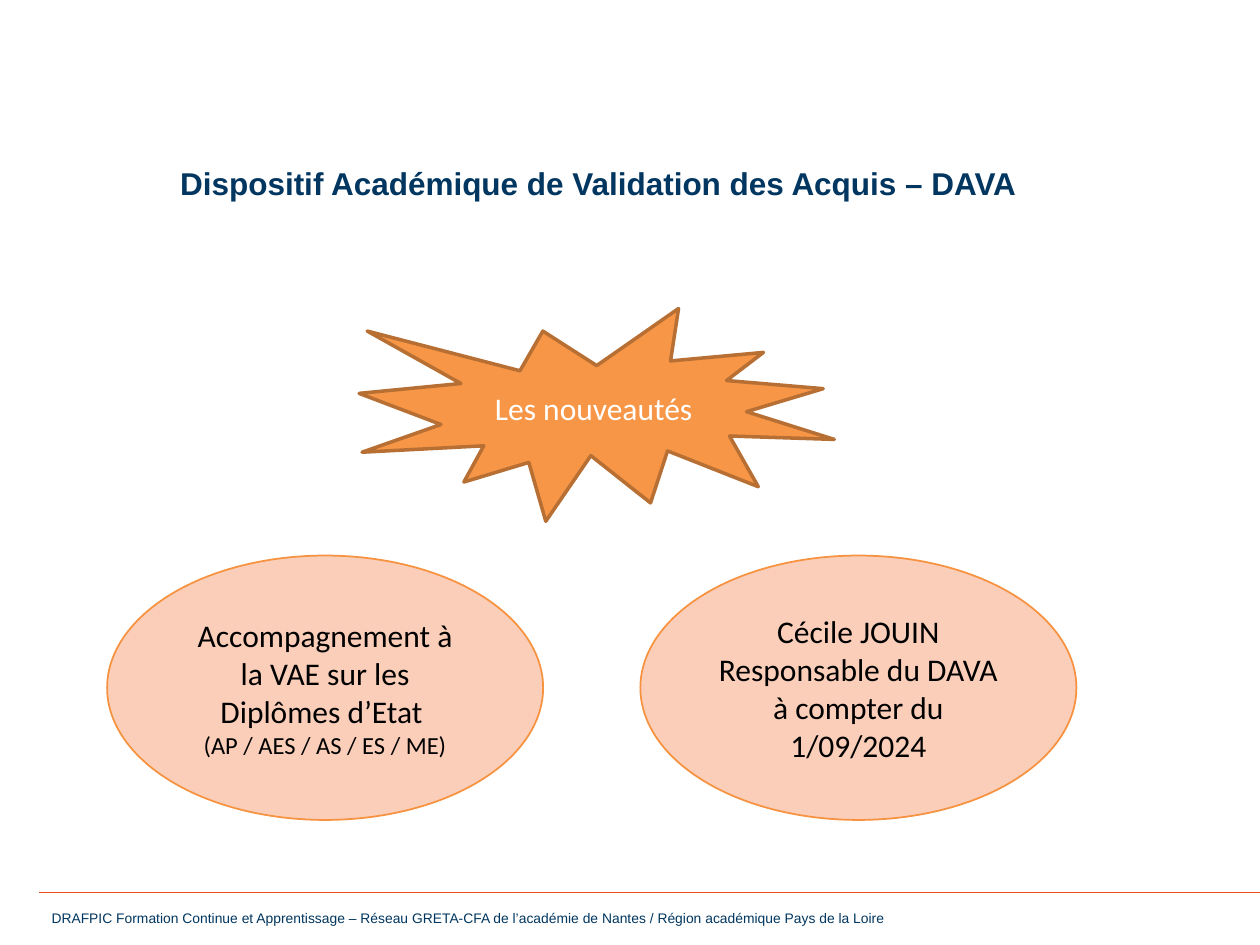
import lxml.etree
import pptx
import pptx.dml.color
import pptx.enum.shapes
import pptx.enum.text
import pptx.oxml.ns
import pptx.util

Cm = pptx.util.Cm
Pt = pptx.util.Pt
SHAPES = pptx.enum.shapes.MSO_SHAPE
ALIGN = pptx.enum.text.PP_ALIGN
ANCHOR = pptx.enum.text.MSO_ANCHOR

COLOURS = {
    "navy": "00365F",
    "rule": "E94E1B",
    "burst": "F79646",
    "burst_edge": "B76F34",
    "bubble": "FBCEB9",
    "bubble_edge": "F69240",
    "white": "FFFFFF",
    "black": "000000",
}


def colour(name):
    return pptx.dml.color.RGBColor.from_string(COLOURS[name])


def write(box, lines, size=18, font="Calibri", ink="black", bold=False,
          align=ALIGN.CENTER, anchor=ANCHOR.MIDDLE):
    frame = box.text_frame
    frame.word_wrap = True
    frame.auto_size = pptx.enum.text.MSO_AUTO_SIZE.NONE
    frame.vertical_anchor = anchor
    for index, line in enumerate(lines):
        text, line_size = line if isinstance(line, tuple) else (line, size)
        para = frame.add_paragraph() if index else frame.paragraphs[0]
        para.alignment = align
        span = para.add_run()
        span.text = text
        span.font.name = font
        span.font.size = Pt(line_size)
        span.font.bold = bold
        span.font.color.rgb = colour(ink)


def add_filled(page, kind, left, top, width, height, fill, edge, weight):
    shape = page.shapes.add_shape(kind, Cm(left), Cm(top), Cm(width), Cm(height))
    shape.shadow.inherit = False
    shape.fill.solid()
    shape.fill.fore_color.rgb = colour(fill)
    shape.line.color.rgb = colour(edge)
    shape.line.width = Pt(weight)
    return shape


def add_footer(page, left, top, width):
    rule = page.shapes.add_connector(
        pptx.enum.shapes.MSO_CONNECTOR.STRAIGHT,
        Cm(left), Cm(top), Cm(left + width), Cm(top))
    rule.line.color.rgb = colour("rule")
    rule.line.width = Pt(0.25)
    properties = rule._element.find(pptx.oxml.ns.qn("p:spPr"))
    lxml.etree.SubElement(properties, pptx.oxml.ns.qn("a:effectLst"))
    box = page.shapes.add_textbox(Cm(left), Cm(top + 0.23), Cm(width - 1.5), Cm(0.58))
    write(box, ["DRAFPIC Formation Continue et Apprentissage – Réseau GRETA-CFA "
                "de l’académie de Nantes / Région académique Pays de la Loire"],
          size=7.9, font="Arial", ink="navy", align=ALIGN.LEFT, anchor=ANCHOR.TOP)


def add_title(page, left, top, width, height):
    title = page.shapes.title
    title.left, title.top = Cm(left), Cm(top)
    title.width, title.height = Cm(width), Cm(height)
    write(title, ["Dispositif Académique de Validation des Acquis – DAVA"],
          font="Arial", ink="navy", bold=True, anchor=ANCHOR.TOP)


def add_burst(page, left, top, width, height):
    burst = add_filled(page, SHAPES.EXPLOSION1, left, top, width, height,
                       "burst", "burst_edge", 2)
    write(burst, ["Les nouveautés"], ink="white")


def add_bubbles(page, left, top, width, height, gap, contents):
    for index, lines in enumerate(contents):
        bubble = add_filled(page, SHAPES.FLOWCHART_CONNECTOR,
                            left + index * (width + gap), top, width, height,
                            "bubble", "bubble_edge", 1)
        write(bubble, lines)


def main():
    deck = pptx.Presentation()
    deck.slide_width, deck.slide_height = Cm(25.4), Cm(19.05)
    page = deck.slides.add_slide(deck.slide_layouts[5])
    add_footer(page, 0.79, 17.98, 24.61)
    add_title(page, 3.15, 3.18, 17.83, 1.02)
    add_burst(page, 7.24, 6.22, 9.58, 4.29)
    add_bubbles(page, 2.16, 11.2, 8.79, 5.33, 1.96, [
        ["Accompagnement à la VAE sur les Diplômes d’Etat ",
         ("(AP / AES / AS / ES / ME)", 14)],
        ["Cécile JOUIN Responsable du DAVA", "à compter du 1/09/2024"],
    ])
    deck.save("out.pptx")


if __name__ == "__main__":
    main()
